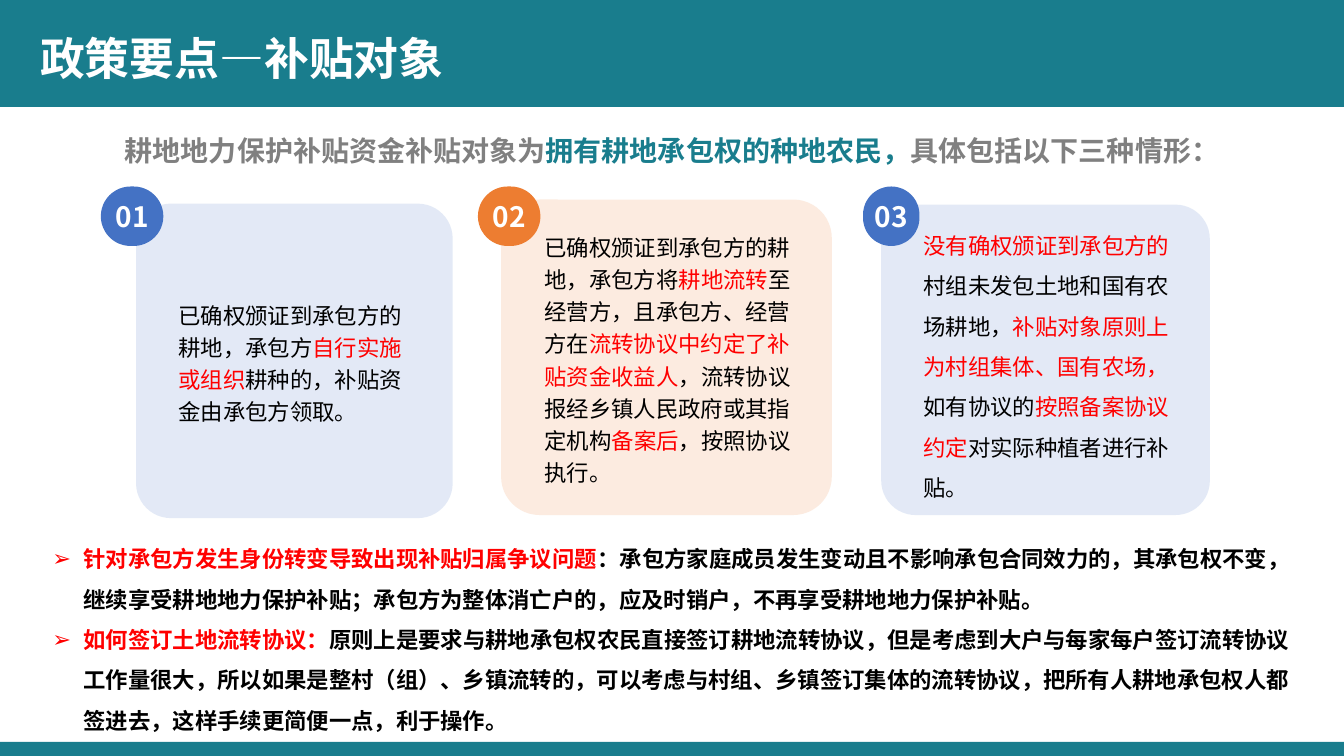
import pptx
import pptx.dml.color
import pptx.enum.shapes
import pptx.enum.text
import pptx.oxml.ns
import pptx.util
from lxml import etree

PX = 9144  # EMU per px, 100 px to the inch
COLORS = {"teal": "197D8D", "blue": "4472C4", "orange": "ED7D31", "red": "FF0000",
          "gray": "808080", "black": "000000", "white": "FFFFFF"}
CJK, LATIN = "Noto Sans CJK SC", "Arial"
SHAPE = pptx.enum.shapes.MSO_SHAPE
ALIGN = pptx.enum.text.PP_ALIGN
ANCHOR = pptx.enum.text.MSO_ANCHOR


def px(n):
    return pptx.util.Emu(n * PX)


def rgb(name):
    return pptx.dml.color.RGBColor.from_string(COLORS[name])


def sub(parent, tag, **attrs):
    return etree.SubElement(parent, pptx.oxml.ns.qn(tag), attrs)


def write(tf, text, size=16, color="black", accent="red", font=LATIN, bold=None,
          align=None, spacing=None, bullet=None, indent=31):
    """Fill tf, one paragraph a line; parts between asterisks take the accent colour."""
    for i, line in enumerate(text.split("\n")):
        p = tf.add_paragraph() if i else tf.paragraphs[0]
        p.alignment, p.line_spacing = align, spacing
        if bullet:
            pPr = p._p.get_or_add_pPr()
            pPr.set("marL", str(px(indent)))
            pPr.set("indent", str(px(-indent)))
            sub(pPr, "a:buFont", typeface=LATIN)
            sub(pPr, "a:buChar", char=bullet)
        for j, part in enumerate(line.split("*")):
            if not part:
                continue
            r = p.add_run()
            r.text = part
            r.font.size, r.font.bold, r.font.name = pptx.util.Pt(size), bold, font
            r.font.color.rgb = rgb(accent if j % 2 else color)
            sub(r._r.get_or_add_rPr(), "a:ea", typeface=CJK)


class Deck:
    def __init__(self, width, height):
        self.prs = pptx.Presentation()
        self.prs.slide_width, self.prs.slide_height = px(width), px(height)
        self.slide = self.prs.slides.add_slide(self.prs.slide_layouts[6])

    def shape(self, kind, box, color, opacity=100, radius=None, shapes=None):
        sp = (shapes or self.slide.shapes).add_shape(kind, *map(px, box))
        sp.shadow.inherit = False
        sp.fill.solid()
        sp.fill.fore_color.rgb = rgb(color)
        sp.line.fill.background()
        if radius is not None:
            sp.adjustments[0] = radius
        if opacity < 100:
            clr = sp._element.spPr.find(".//" + pptx.oxml.ns.qn("a:srgbClr"))
            sub(clr, "a:alpha", val=str(opacity * 1000))
        return sp

    def text(self, box, text, **fmt):
        tf = self.slide.shapes.add_textbox(*map(px, box)).text_frame
        tf.word_wrap = True
        write(tf, text, **fmt)

    def card(self, box, badge, number, color, text, radius=0.111, right=28, spacing=1.2):
        """A tinted rounded panel with a numbered badge on its corner, grouped."""
        shapes = self.slide.shapes.add_group_shape().shapes
        tf = self.shape(SHAPE.ROUNDED_RECTANGLE, box, color, 15, radius, shapes).text_frame
        tf.word_wrap, tf.vertical_anchor = True, ANCHOR.MIDDLE
        tf.margin_left, tf.margin_right = px(32), px(right)
        write(tf, text, align=ALIGN.LEFT, spacing=spacing)
        tf = self.shape(SHAPE.ROUNDED_RECTANGLE, badge, color, 100, 0.5, shapes).text_frame
        tf.word_wrap, tf.vertical_anchor = False, ANCHOR.MIDDLE
        write(tf, number, size=20, color="white", font=CJK, bold=True, align=ALIGN.CENTER)


def main():
    deck = Deck(1333, 750)
    for top, height in ((736, 14), (0, 106)):
        deck.shape(SHAPE.RECTANGLE, (0, top, 1333, height), "teal")

    deck.card((135, 202, 314, 312), (100, 185, 62, 59), "01", "blue",
              "已确权颁证到承包方的耕地，承包方*自行实施或组织*耕种的，补贴资金由承包方领取。")
    deck.card((497, 198, 328, 313), (474, 185, 62, 59), "02", "orange",
              "已确权颁证到承包方的耕地，承包方将*耕地流转*至经营方，且承包方、经营方在"
              "*流转协议中约定了补贴资金收益人*，流转协议报经乡镇人民政府或其指定机构"
              "*备案后*，按照协议执行。", radius=0.122, right=10)
    deck.card((874, 203, 326, 308), (856, 185, 56, 59), "03", "blue",
              "*没有确权颁证到承包方的*村组未发包土地和国有农场耕地，"
              "*补贴对象原则上为村组集体、国有农场，*如有协议的"
              "*按照备案协议约定*对实际种植者进行补贴。", spacing=1.5)

    deck.text((114, 128, 1090, 44),
              "耕地地力保护补贴资金补贴对象为*拥有耕地承包权的种地农民，*具体包括以下三种情形：",
              size=20, color="gray", accent="teal", font=CJK, bold=True)
    deck.text((30, 26, 699, 64), "政策要点—补贴对象",
              size=32, color="white", font=CJK, bold=True)
    deck.text((42, 523, 1249, 201),
              "*针对承包方发生身份转变导致出现补贴归属争议问题*：承包方家庭成员发生变动且不影响"
              "承包合同效力的，其承包权不变，继续享受耕地地力保护补贴；承包方为整体消亡户的，"
              "应及时销户，不再享受耕地地力保护补贴。\n"
              "*如何签订土地流转协议：*原则上是要求与耕地承包权农民直接签订耕地流转协议，"
              "但是考虑到大户与每家每户签订流转协议工作量很大，所以如果是整村（组）、乡镇流转的，"
              "可以考虑与村组、乡镇签订集体的流转协议，把所有人耕地承包权人都签进去，"
              "这样手续更简便一点，利于操作。",
              bold=True, spacing=1.5, bullet="➢")
    deck.prs.save("out.pptx")


if __name__ == "__main__":
    main()
